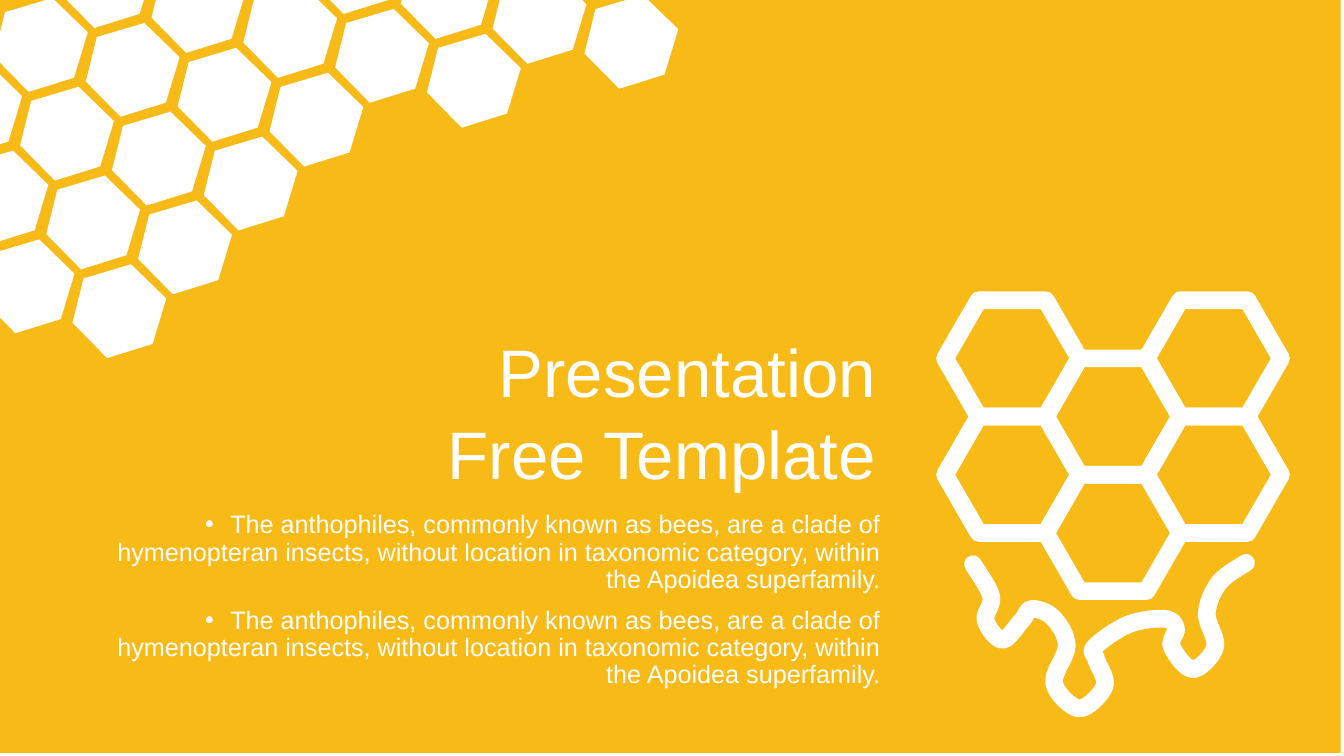
from math import cos, pi, sin, sqrt

from lxml.etree import SubElement
from pptx import Presentation
from pptx.dml.color import RGBColor
from pptx.enum.shapes import MSO_SHAPE as Shape
from pptx.enum.text import MSO_ANCHOR as Anchor, PP_ALIGN as Align
from pptx.oxml.ns import qn
from pptx.util import Pt

HUES = {"honey": "F8BA16", "white": "FFFFFF"}
FONT = "Arial"
BODY = ("The anthophiles, commonly known as bees, are a clade of hymenopteran "
        "insects, without location in taxonomic category, within the Apoidea "
        "superfamily.")

# Corners of a tilted cell, from the top left of its box
CELL = [(7.9, 10.1), (0, 41.8), (24.8, 67), (57.2, 56.9), (67, 24.5), (41.8, 0)]
ACROSS, DOWN = (65.6, 17.8), (18.7, 63.4)
# Row of the grid: first and last cell
ROWS = {-2: (4, 7), -1: (1, 5), 0: (0, 3), 1: (-1, 2), 2: (-1, 1), 3: (-1, 0)}

# Column and half-row of each comb cell
COMB = [(0, 0), (2, 0), (1, 1), (0, 2), (2, 2), (1, 3)]
DRIP = [(27, 195), (40, 218), (36, 235), (48, 249), (62, 235), (69, 227),
        (84, 233), (94, 253), (85, 280), (103, 298), (121, 282), (115, 263),
        (114, 254), (138, 238), (164, 234), (172, 241), (169, 254), (184, 270),
        (200, 254), (194, 230), (203, 208), (222, 194)]


def hue(name):
    return RGBColor.from_string(HUES[name])


def paint(shape, name):
    shape.shadow.inherit = False
    shape.fill.solid()
    shape.fill.fore_color.rgb = hue(name)
    shape.line.fill.background()


def stroke(shape, width):
    """Give a bare outline with round ends and corners."""
    shape.shadow.inherit = False
    shape.fill.background()
    line = shape.line
    line.color.rgb = hue("white")
    line.width = Pt(width)
    ln = shape.element.spPr.find(qn("a:ln"))
    ln.set("cap", "rnd")
    SubElement(ln, qn("a:round"))


def trace(slide, loops, close=True):
    """Build one freeform from lists of points."""
    loops = [[(Pt(x), Pt(y)) for x, y in loop] for loop in loops]
    path = slide.shapes.build_freeform(*loops[0][0], scale=1.0)
    for num, loop in enumerate(loops):
        if num:
            path.move_to(*loop[0])
        path.add_line_segments(loop[1:], close=close)
    return path.convert_to_shape()


def clip(points, axis, low):
    """Cut off the part of a polygon below a limit on one axis."""
    kept = []
    for a, b in zip(points, points[1:] + points[:1]):
        if a[axis] >= low:
            kept.append(a)
        if (a[axis] >= low) != (b[axis] >= low):
            part = (low - a[axis]) / (b[axis] - a[axis])
            kept.append(tuple(p + part * (q - p) for p, q in zip(a, b)))
    return kept


def smooth(points, steps=8):
    """Run a Catmull-Rom curve through the points."""
    ends = [points[0], *points, points[-1]]
    curve = []
    for a, b, c, d in zip(ends, ends[1:], ends[2:], ends[3:]):
        for step in range(steps):
            t = step / steps
            curve.append(tuple(
                q + t * (r - p + t * (2 * p - 5 * q + 4 * r - s
                                      + t * (3 * q - p - 3 * r + s))) / 2
                for p, q, r, s in zip(a, b, c, d)))
    return curve + [points[-1]]


def back(slide, x, y, w, h):
    rect = slide.shapes.add_shape(Shape.RECTANGLE, Pt(x), Pt(y), Pt(w), Pt(h))
    paint(rect, "honey")


def hive(slide, x, y, left, top):
    """Lay the tilted cells from x, y and trim them at left and top."""
    for row, (first, last) in ROWS.items():
        for col in range(first, last + 1):
            dx = x + col * ACROSS[0] + row * DOWN[0]
            dy = y + col * ACROSS[1] + row * DOWN[1]
            cell = [(dx + px, dy + py) for px, py in CELL]
            paint(trace(slide, [clip(clip(cell, 0, left), 1, top)]), "white")


def honey(slide, x, y, size=48, width=12.6):
    """Draw the comb with honey dripping below it."""
    loops = []
    for col, half in COMB:
        cx = x + 55 + col * 1.5 * size
        cy = y + 48 + half * size * sqrt(3) / 2
        loops.append([(cx + size * cos(k * pi / 3), cy + size * sin(k * pi / 3))
                      for k in range(6)])
    stroke(trace(slide, loops), width)
    drip = [(x + px, y + py) for px, py in DRIP]
    stroke(trace(slide, [smooth(drip)], close=False), width)


def text(slide, x, y, w, h, lines, size, anchor, bullet=False):
    box = slide.shapes.add_textbox(Pt(x), Pt(y), Pt(w), Pt(h))
    frame = box.text_frame
    frame.word_wrap = True
    frame.vertical_anchor = anchor
    for num, line in enumerate(lines):
        para = frame.add_paragraph() if num else frame.paragraphs[0]
        para.alignment = Align.RIGHT
        para.line_spacing = 0.9
        para.space_before = Pt(10)
        if bullet:
            props = para._p.get_or_add_pPr()
            props.set("marL", str(Pt(18)))
            props.set("indent", str(-Pt(18)))
            SubElement(props, qn("a:buFont"), typeface=FONT)
            SubElement(props, qn("a:buChar"), char="•")
        run = para.add_run()
        run.text = line
        run.font.name = FONT
        run.font.size = Pt(size)
        run.font.color.rgb = hue("white")


def cover(deck):
    slide = deck.slides.add_slide(deck.slide_layouts[6])
    back(slide, -7.9, -4.3, 965.5, 542.2)
    hive(slide, -4.3, -1.4, left=-7.2, top=-4.3)
    for num, line in enumerate(["Presentation", "Free Template"]):
        text(slide, 268.6, 237.6 + num * 58.3, 364.3, 61.9, [line], 48,
             Anchor.MIDDLE)
    text(slide, 52.6, 362.2, 583.2, 155.5, [BODY] * 2, 18, Anchor.TOP,
         bullet=True)
    honey(slide, 668, 208)


def main():
    deck = Presentation()
    deck.slide_width, deck.slide_height = Pt(960), Pt(540)
    cover(deck)
    deck.save("out.pptx")


if __name__ == "__main__":
    main()
